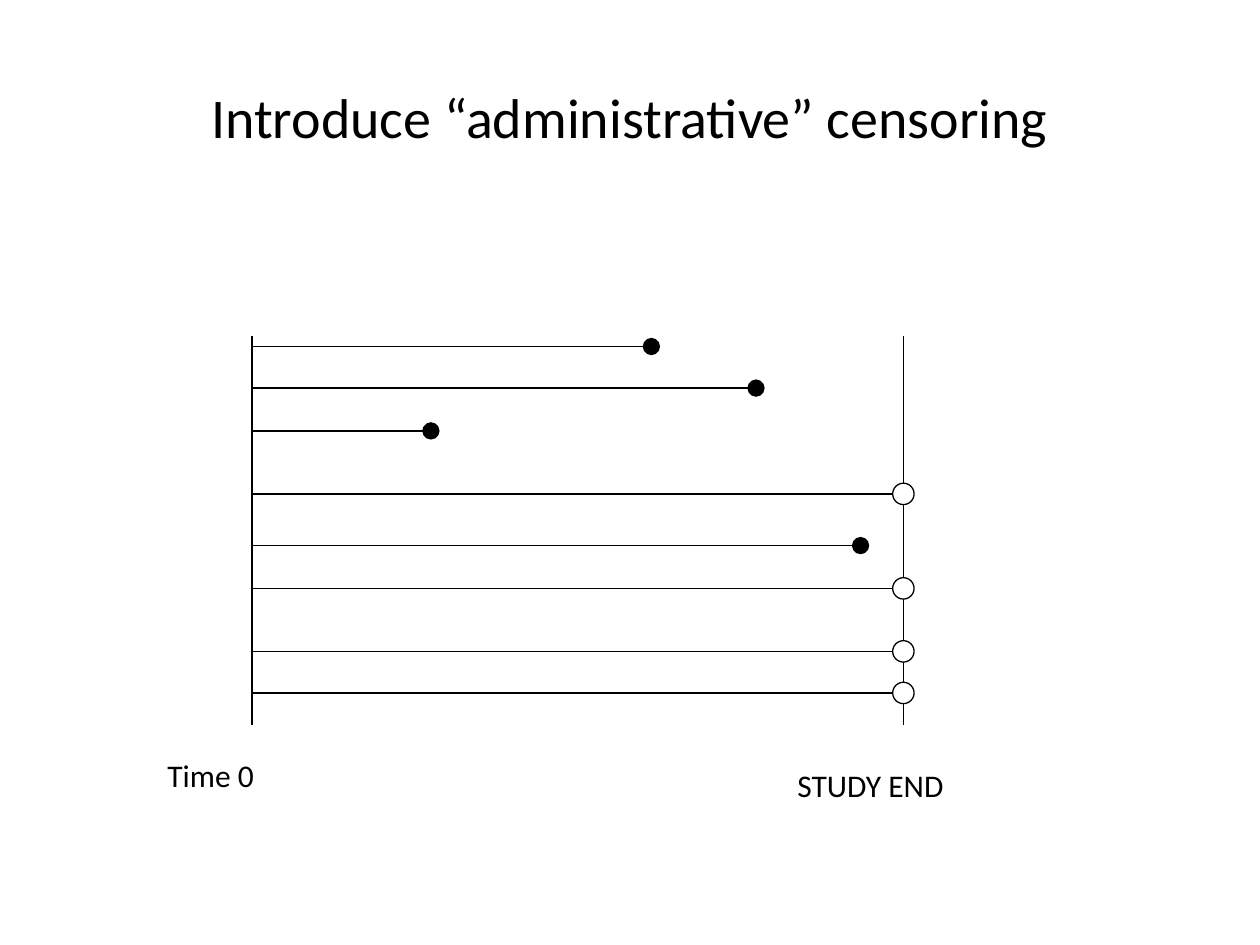
"""Build a slide of follow-up lines with administrative censoring at study end."""
from dataclasses import dataclass

import lxml.etree
import pptx
import pptx.dml.color
import pptx.enum.shapes
import pptx.enum.text
import pptx.oxml.ns
import pptx.shapes.connector
import pptx.slide
import pptx.util
from pptx.util import Inches

BLACK = pptx.dml.color.RGBColor(0, 0, 0)
WHITE = pptx.dml.color.RGBColor(255, 255, 255)
FONT = "Calibri"
LINE_WIDTH = pptx.util.Pt(0.75)
TIME_ZERO = 2.0
STUDY_END = 7.17
AXIS_TOP, AXIS_BOTTOM = 2.67, 5.75
CIRCLE_SIZE = 0.17


@dataclass(frozen=True)
class Subject:
    height: float
    end: float = STUDY_END

    @property
    def censored(self) -> bool:
        return self.end == STUDY_END


SUBJECTS = (
    Subject(2.75, 5.17),
    Subject(3.08, 6),
    Subject(3.42, 3.42),
    Subject(3.92),
    Subject(4.33, 6.83),
    Subject(4.67),
    Subject(5.17),
    Subject(5.5),
)


def add_text(
    slide: pptx.slide.Slide,
    text: str,
    *,
    left: float,
    top: float,
    width: float,
    height: float,
    size: float = 18,
    wrap: bool = False,
    anchor: pptx.enum.text.MSO_ANCHOR = pptx.enum.text.MSO_ANCHOR.TOP,
    align: pptx.enum.text.PP_ALIGN = pptx.enum.text.PP_ALIGN.LEFT,
) -> None:
    shape = slide.shapes.add_textbox(Inches(left), Inches(top), Inches(width), Inches(height))
    frame = shape.text_frame
    frame.word_wrap = wrap
    frame.vertical_anchor = anchor
    paragraph = frame.paragraphs[0]
    paragraph.text = text
    paragraph.alignment = align
    paragraph.font.name = FONT
    paragraph.font.size = pptx.util.Pt(size)
    paragraph.font.color.rgb = BLACK


def add_line(
    slide: pptx.slide.Slide, start: tuple[float, float], end: tuple[float, float]
) -> pptx.shapes.connector.Connector:
    connector = slide.shapes.add_connector(
        pptx.enum.shapes.MSO_CONNECTOR.STRAIGHT, *map(Inches, start + end)
    )
    connector.line.color.rgb = BLACK
    connector.line.width = LINE_WIDTH
    lxml.etree.SubElement(connector._element.spPr, pptx.oxml.ns.qn("a:effectLst"))
    return connector


def add_axis(slide: pptx.slide.Slide, position: float) -> None:
    add_line(slide, (position, AXIS_TOP), (position, AXIS_BOTTOM))


def add_follow_up(slide: pptx.slide.Slide, subject: Subject) -> None:
    connector = add_line(slide, (TIME_ZERO, subject.height), (subject.end, subject.height))
    if not subject.censored:
        lxml.etree.SubElement(
            connector.line._get_or_add_ln(),
            pptx.oxml.ns.qn("a:tailEnd"),
            {"type": "oval", "w": "lg", "len": "lg"},
        )


def add_censoring_circle(slide: pptx.slide.Slide, subject: Subject) -> None:
    circle = slide.shapes.add_shape(
        pptx.enum.shapes.MSO_SHAPE.OVAL,
        Inches(subject.end - CIRCLE_SIZE / 2),
        Inches(subject.height - CIRCLE_SIZE / 2),
        Inches(CIRCLE_SIZE),
        Inches(CIRCLE_SIZE),
    )
    circle.shadow.inherit = False
    circle.fill.solid()
    circle.fill.fore_color.rgb = WHITE
    circle.line.color.rgb = BLACK
    circle.line.width = LINE_WIDTH


def main() -> None:
    presentation = pptx.Presentation()
    presentation.slide_width = Inches(10)
    presentation.slide_height = Inches(7.5)
    slide = presentation.slides.add_slide(presentation.slide_layouts[6])

    add_text(
        slide,
        "Introduce “administrative” censoring",
        left=0.5,
        top=0.3,
        width=9,
        height=1.25,
        size=32,
        wrap=True,
        anchor=pptx.enum.text.MSO_ANCHOR.MIDDLE,
        align=pptx.enum.text.PP_ALIGN.CENTER,
    )
    add_text(slide, "Time 0", left=1.23, top=5.95, width=1.07, height=0.4)
    add_text(slide, "STUDY END", left=6.23, top=6.03, width=1.68, height=0.4)

    for position in (TIME_ZERO, STUDY_END):
        add_axis(slide, position)
    for subject in SUBJECTS:
        add_follow_up(slide, subject)
        if subject.censored:
            add_censoring_circle(slide, subject)

    presentation.save("out.pptx")


if __name__ == "__main__":
    main()
